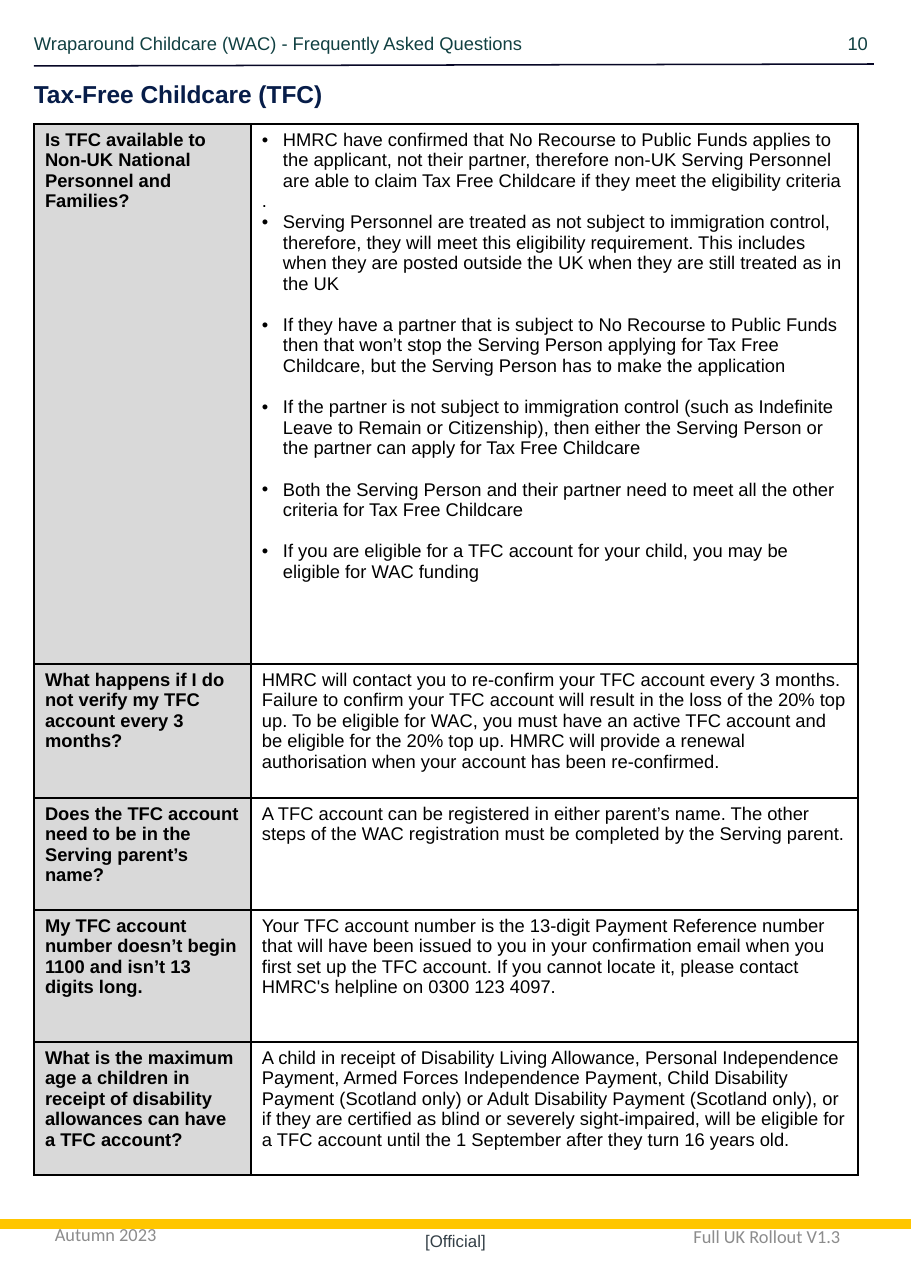
from lxml import etree
from pptx import Presentation
from pptx.dml.color import RGBColor
from pptx.enum.shapes import MSO_CONNECTOR
from pptx.enum.text import MSO_ANCHOR, PP_ALIGN
from pptx.oxml.ns import qn
from pptx.util import Pt

EMU_PER_PX = 8298
SLIDE_WIDTH, SLIDE_HEIGHT = 911, 1288
STRAIGHT = MSO_CONNECTOR.STRAIGHT
LEFT, CENTER = PP_ALIGN.LEFT, PP_ALIGN.CENTER
TOP, MIDDLE, BOTTOM = MSO_ANCHOR.TOP, MSO_ANCHOR.MIDDLE, MSO_ANCHOR.BOTTOM

BLACK = "000000"
QUESTION_FILL = "D9D9D9"
FOOTER_GREY = "8C8C8C"
BULLET_INDENT = 21
COLUMN_WIDTHS = [217, 607]
ROW_HEIGHTS = [540, 134, 112, 132, 133]

ELIGIBILITY_POINTS = [
    "HMRC have confirmed that No Recourse to Public Funds applies to the applicant, not their "
    "partner, therefore non-UK Serving Personnel are able to claim Tax Free Childcare if they "
    "meet the eligibility criteria",
    ".",
    "Serving Personnel are treated as not subject to immigration control, therefore, they will "
    "meet this eligibility requirement. This includes when they are posted outside the UK when "
    "they are still treated as in the UK",
    "If they have a partner that is subject to No Recourse to Public Funds then that won’t stop "
    "the Serving Person applying for Tax Free Childcare, but the Serving Person has to make the "
    "application",
    "If the partner is not subject to immigration control (such as Indefinite Leave to Remain or "
    "Citizenship), then either the Serving Person or the partner can apply for Tax Free Childcare",
    "Both the Serving Person and their partner need to meet all the other criteria for Tax Free "
    "Childcare",
    "If you are eligible for a TFC account for your child, you may be eligible for WAC funding",
]
QUESTIONS = [
    ("Is TFC available to Non-UK National Personnel and Families?",
     "\n".join(ELIGIBILITY_POINTS)),
    ("What happens if I do not verify my TFC account every 3 months?",
     "HMRC will contact you to re-confirm your TFC account every 3 months. Failure to confirm "
     "your TFC account will result in the loss of the 20% top up. To be eligible for WAC, you "
     "must have an active TFC account and be eligible for the 20% top up. HMRC will provide a "
     "renewal authorisation when your account has been re-confirmed."),
    ("Does the TFC account need to be in the Serving parent’s name?",
     "A TFC account can be registered in either parent’s name. The other steps of the WAC "
     "registration must be completed by the Serving parent."),
    ("My TFC account number doesn’t begin 1100 and isn’t 13 digits long.",
     "Your TFC account number is the 13-digit Payment Reference number that will have been "
     "issued to you in your confirmation email when you first set up the TFC account. If you "
     "cannot locate it, please contact HMRC's helpline on 0300 123 4097."),
    ("What is the maximum age a children in receipt of disability allowances can have a TFC "
     "account?",
     "A child in receipt of Disability Living Allowance, Personal Independence Payment, Armed "
     "Forces Independence Payment, Child Disability Payment (Scotland only) or Adult Disability "
     "Payment (Scotland only), or if they are certified as blind or severely sight-impaired, "
     "will be eligible for a TFC account until the 1 September after they turn 16 years old."),
]


def px(length):
    return length * EMU_PER_PX


def color(value):
    return RGBColor.from_string(value)


def format_text(text_frame, size, hex_color, font="Arial", bold=False):
    for paragraph in text_frame.paragraphs:
        for run in paragraph.runs:
            run.font.name = font
            run.font.size = Pt(size)
            run.font.bold = bold
            run.font.color.rgb = color(hex_color)


def add_text(slide, text, box, size, hex_color, font="Arial", bold=False,
             align=LEFT, anchor=TOP, inset=True):
    shape = slide.shapes.add_textbox(*map(px, box))
    text_frame = shape.text_frame
    text_frame.word_wrap = True
    text_frame.vertical_anchor = anchor
    if not inset:
        text_frame.margin_left = text_frame.margin_right = 0
        text_frame.margin_top = text_frame.margin_bottom = 0
    text_frame.text = text
    text_frame.paragraphs[0].alignment = align
    format_text(text_frame, size, hex_color, font, bold)
    return shape


def add_right_tab(paragraph, position):
    properties = paragraph._p.get_or_add_pPr()
    tabs = etree.SubElement(properties, qn("a:tabLst"))
    etree.SubElement(tabs, qn("a:tab"), pos=str(px(position)), algn="r")


def add_line(slide, start, end, hex_color, width):
    line = slide.shapes.add_connector(STRAIGHT, *map(px, start + end))
    line.line.color.rgb = color(hex_color)
    line.line.width = Pt(width)
    etree.SubElement(line._element.spPr, qn("a:effectLst"))


def add_bullet(paragraph):
    properties = paragraph._p.get_or_add_pPr()
    properties.set("marL", str(px(BULLET_INDENT)))
    properties.set("indent", str(-px(BULLET_INDENT)))
    etree.SubElement(properties, qn("a:buFont"), typeface="Arial")
    etree.SubElement(properties, qn("a:buChar"), char="•")


def add_borders(cell):
    properties = cell._tc.get_or_add_tcPr()
    for side in ("a:lnL", "a:lnR", "a:lnT", "a:lnB"):
        border = etree.SubElement(properties, qn(side), w=str(Pt(1)))
        fill = etree.SubElement(border, qn("a:solidFill"))
        etree.SubElement(fill, qn("a:srgbClr"), val=BLACK)


def fill_cell(cell, text, is_question):
    add_borders(cell)
    if is_question:
        cell.fill.solid()
        cell.fill.fore_color.rgb = color(QUESTION_FILL)
    else:
        cell.fill.background()
    cell.text_frame.text = text
    format_text(cell.text_frame, 12, BLACK, bold=is_question)


def format_eligibility(cell):
    for index, paragraph in enumerate(cell.text_frame.paragraphs):
        if paragraph.text == ".":
            continue
        # The first two points are parted by the lone full stop
        if index > 2:
            paragraph.space_before = Pt(13.5)
        add_bullet(paragraph)


def add_question_table(slide, left, top):
    frame = slide.shapes.add_table(
        len(QUESTIONS), len(COLUMN_WIDTHS), px(left), px(top),
        px(sum(COLUMN_WIDTHS)), px(sum(ROW_HEIGHTS)))
    table = frame.table
    table.first_row = table.horz_banding = False
    for column, width in zip(table.columns, COLUMN_WIDTHS):
        column.width = px(width)
    for row, height, texts in zip(table.rows, ROW_HEIGHTS, QUESTIONS):
        row.height = px(height)
        for index, (cell, text) in enumerate(zip(row.cells, texts)):
            fill_cell(cell, text, is_question=index == 0)
    format_eligibility(table.cell(0, 1))


def main():
    presentation = Presentation()
    presentation.slide_width = px(SLIDE_WIDTH)
    presentation.slide_height = px(SLIDE_HEIGHT)
    slide = presentation.slides.add_slide(presentation.slide_layouts[6])

    # Page header
    header = add_text(slide, "Wraparound Childcare (WAC) - Frequently Asked Questions\t10",
                      (34, 32, 840, 22), 12, "114042", inset=False)
    add_right_tab(header.text_frame.paragraphs[0], 834)
    add_line(slide, (34, 66), (874, 64), "060625", 1)

    # Questions and answers
    add_text(slide, "Tax-Free Childcare (TFC)", (23, 74, 330, 41), 16, "071D49", bold=True)
    add_question_table(slide, 34, 124)

    # Page footer
    add_line(slide, (SLIDE_WIDTH, 1224), (0, 1224), "FFC600", 6)
    add_text(slide, "Autumn 2023", (44, 1200, 213, 68), 12, FOOTER_GREY, "Calibri",
             anchor=MIDDLE)
    add_text(slide, "Full UK Rollout V1.3", (623, 1202, 288, 68), 12, FOOTER_GREY, "Calibri",
             align=CENTER, anchor=MIDDLE)
    add_text(slide, "[Official]", (0, 1230, SLIDE_WIDTH, 21), 11, "333F47",
             align=CENTER, anchor=BOTTOM, inset=False)

    presentation.save("out.pptx")


if __name__ == "__main__":
    main()
